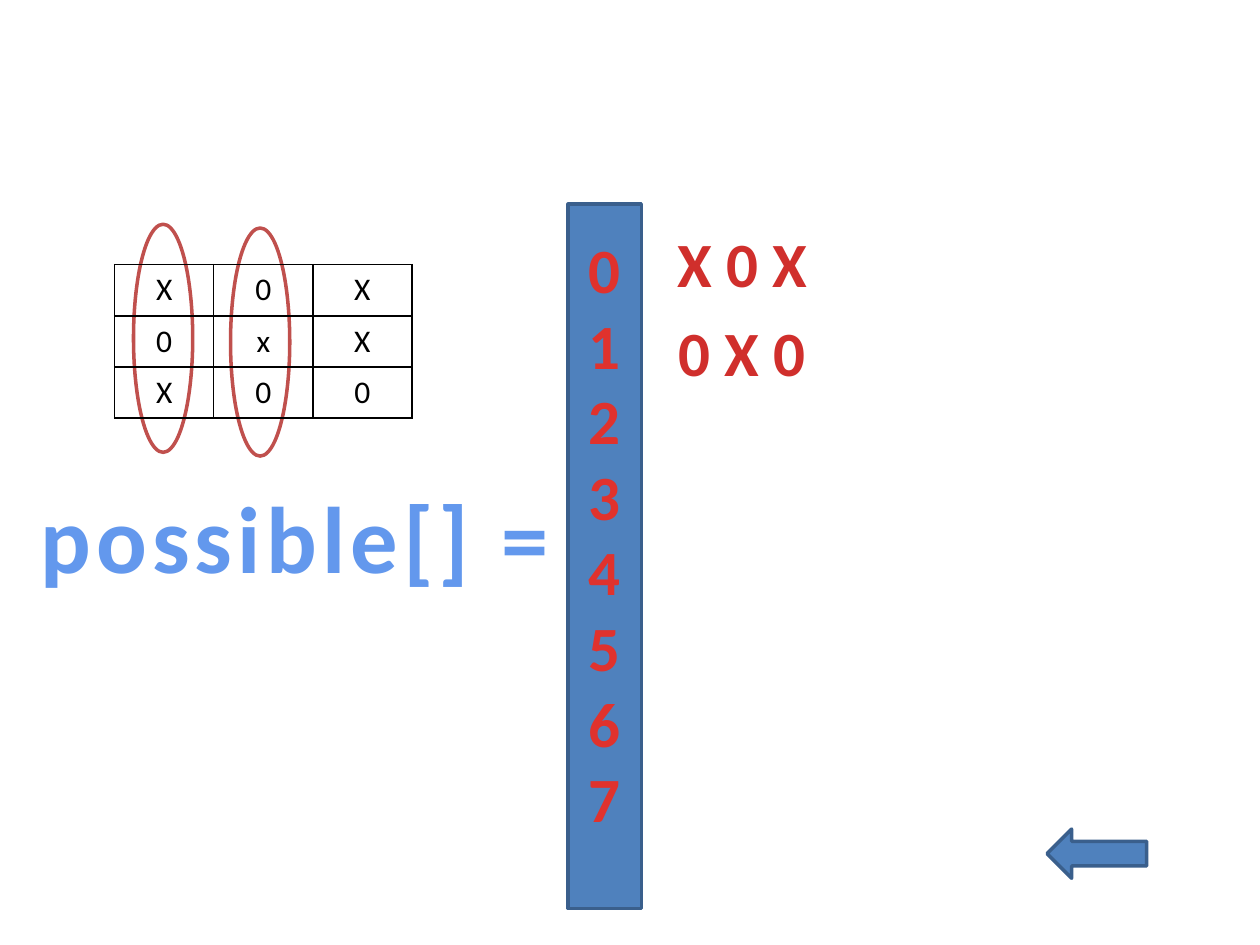
from lxml import etree
from pptx import Presentation
from pptx.dml.color import RGBColor
from pptx.enum.shapes import MSO_SHAPE as Shape
from pptx.enum.text import MSO_AUTO_SIZE as AutoSize, PP_ALIGN as Align
from pptx.oxml import parse_xml
from pptx.util import Inches, Pt

NAMESPACE = 'xmlns:a="http://schemas.openxmlformats.org/drawingml/2006/main"'
BLUE, DARK_BLUE, RED, WHITE, BLACK = "4F81BD", "3A5F8C", "C0504D", "FFFFFF", "000000"
HEADING_STOPS = [(10, "6398ED"), (75, "265EA0")]
INDEX_STOPS = [(25, "E0322D"), (100, "A2201C")]
LINE_STOPS = [(0, "FC7C7A"), (75, "D02F2C"), (100, "C70500")]
BOARD = ["X0X", "0xX", "X00"]


def color(value):
    return RGBColor.from_string(value)


def solid_xml(value):
    return f'<a:solidFill {NAMESPACE}><a:srgbClr val="{value}"/></a:solidFill>'


def gradient_xml(stops):
    stop_xml = "".join(f'<a:gs pos="{position * 1000}"><a:srgbClr val="{value}"/></a:gs>'
                       for position, value in stops)
    return (f'<a:gradFill {NAMESPACE}><a:gsLst>{stop_xml}</a:gsLst>'
            '<a:lin ang="5400000"/></a:gradFill>')


def format_run(run, size, **values):
    settings = {"size": Pt(size), "name": "Calibri", **values}
    for name, value in settings.items():
        setattr(run.font, name, value)


def add_shape(slide, kind, left, top, width, height, fill, line):
    shape = slide.shapes.add_shape(kind, Inches(left), Inches(top),
                                   Inches(width), Inches(height))
    shape.shadow.inherit = False
    shape.fill.solid()
    shape.fill.fore_color.rgb = color(fill)
    shape.line.color.rgb = color(line)
    shape.line.width = Pt(2)


def add_gradient_text(slide, lines, left, top, width, height, size, stops,
                      spacing=0, raised=False):
    box = slide.shapes.add_textbox(Inches(left), Inches(top), Inches(width), Inches(height))
    frame = box.text_frame
    frame.word_wrap = False
    frame.auto_size = AutoSize.SHAPE_TO_FIT_TEXT
    frame.text = "\n".join(lines)
    for paragraph in frame.paragraphs:
        paragraph.alignment = Align.CENTER
        run = paragraph.runs[0]
        format_run(run, size, bold=True)
        properties = run.font._element
        if spacing:
            properties.set("spc", str(int(spacing * 100)))
        parts = [gradient_xml(stops)]
        if raised:  # thin pale outline and soft shadow
            parts.insert(0, f'<a:ln {NAMESPACE} w="11430">{solid_xml("F4F6F9")}</a:ln>')
            parts.append(f'<a:effectLst {NAMESPACE}><a:outerShdw blurRad="50800" dist="39000" '
                         'dir="5460000" algn="tl"><a:srgbClr val="000000">'
                         '<a:alpha val="38000"/></a:srgbClr></a:outerShdw></a:effectLst>')
        for position, part in enumerate(parts):
            properties.insert(position, parse_xml(part))


def add_borders(cell):
    properties = cell._tc.get_or_add_tcPr()
    for position, side in enumerate(("lnL", "lnR", "lnT", "lnB")):
        border = etree.fromstring(f'<a:{side} {NAMESPACE} w="12700">{solid_xml(BLACK)}</a:{side}>')
        properties.insert(position, parse_xml(etree.tostring(border)))


def add_board(slide, rows, left, top, width, height):
    frame = slide.shapes.add_table(len(rows), len(rows[0]), Inches(left), Inches(top),
                                   Inches(width), Inches(height))
    table = frame.table
    table.first_row = table.horz_banding = False
    for row_index, row in enumerate(rows):
        for column_index, mark in enumerate(row):
            cell = table.cell(row_index, column_index)
            cell.text = mark
            cell.fill.background()
            paragraph = cell.text_frame.paragraphs[0]
            paragraph.alignment = Align.CENTER
            format_run(paragraph.runs[0], 18, bold=False)
            paragraph.runs[0].font.color.rgb = color(BLACK)
            add_borders(cell)


def main():
    presentation = Presentation()
    presentation.slide_width, presentation.slide_height = Inches(10), Inches(7.5)
    slide = presentation.slides.add_slide(presentation.slide_layouts[6])

    # Column markers behind the board, and the array name
    add_shape(slide, Shape.OVAL, 1.83, 1.81, 0.47, 1.81, WHITE, RED)
    add_gradient_text(slide, ["possible[] ="], 0.18, 3.75, 4.32, 1.01, 54,
                      HEADING_STOPS, spacing=3, raised=True)
    add_shape(slide, Shape.OVAL, 1.06, 1.78, 0.47, 1.81, WHITE, RED)

    # Array with its indexes
    add_shape(slide, Shape.RECTANGLE, 4.51, 1.62, 0.58, 5.59, BLUE, DARK_BLUE)
    add_gradient_text(slide, [str(index) for index in range(8)], 4.57, 1.78, 0.46, 4.95,
                      36, INDEX_STOPS, spacing=0.5)

    # Game board
    add_board(slide, BOARD, 0.91, 2.1, 2.36, 1.22)

    # Board columns stored so far
    add_gradient_text(slide, ["X 0 X"], 5.27, 1.73, 1.24, 0.71, 36, LINE_STOPS)
    add_gradient_text(slide, ["0 X 0"], 5.28, 2.44, 1.22, 0.71, 36, LINE_STOPS)

    # Back arrow
    add_shape(slide, Shape.LEFT_ARROW, 8.31, 6.58, 0.79, 0.39, BLUE, DARK_BLUE)

    presentation.save("out.pptx")


if __name__ == "__main__":
    main()
